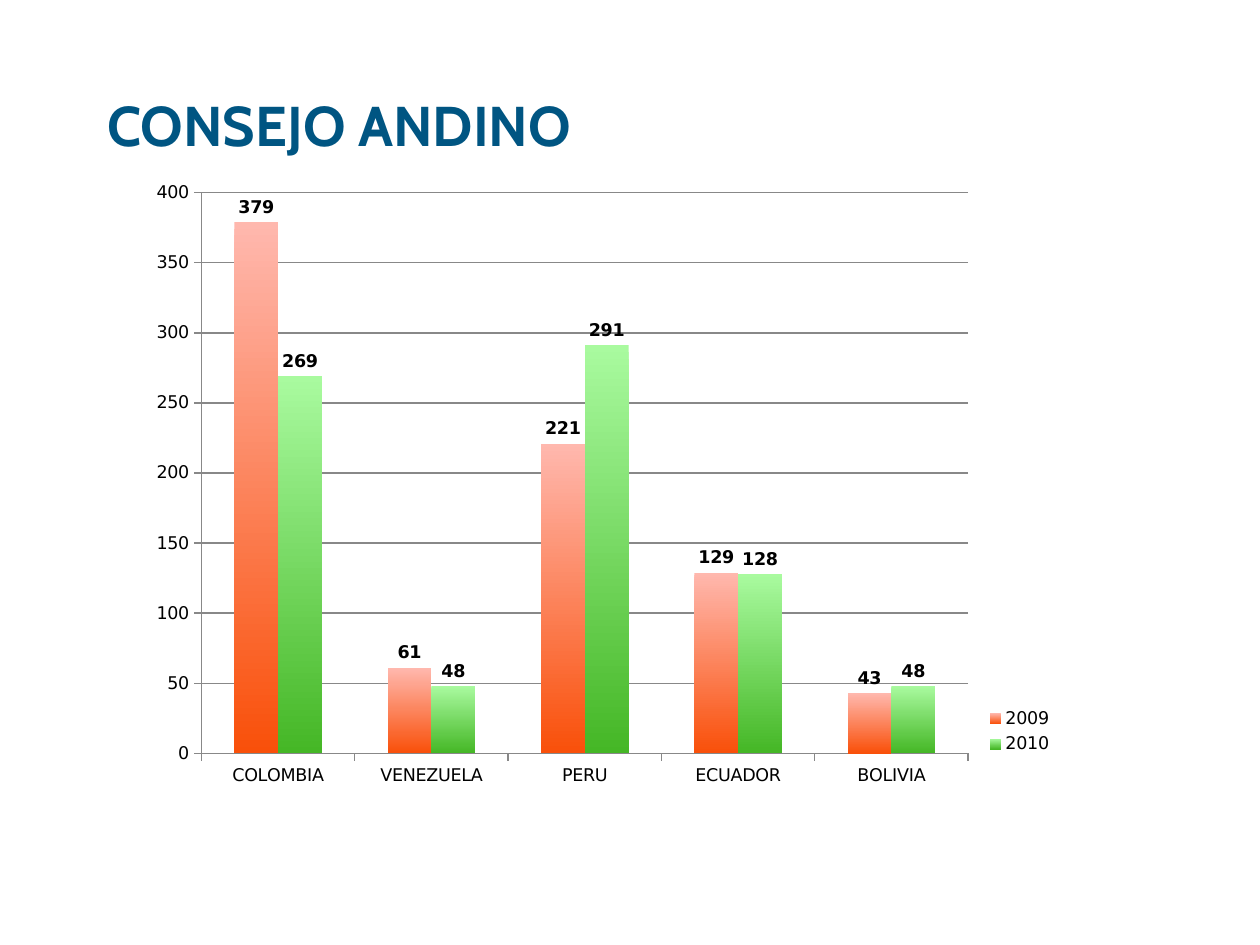
"""Build the Consejo Andino slide: a title over a clustered column chart."""
from lxml import etree
from pptx import Presentation
from pptx import util as u
from pptx.chart.data import CategoryChartData
from pptx.dml.color import RGBColor
from pptx.enum import chart as ch, text
from pptx.oxml.ns import qn

WIDE, HIGH = 10, 7.5
HEX = {"title": "005582", "text": "000000", "line": "888888"}
FILLS = [("FFB8AE", "F9500A"), ("A9FA9F", "45B726")]
LANDS = ["COLOMBIA", "VENEZUELA", "PERU", "ECUADOR", "BOLIVIA"]
YEARS = {"2009": [379, 61, 221, 129, 43], "2010": [269, 48, 291, 128, 48]}


def rgb(code):
    return RGBColor.from_string(code)


def style(item, **vals):
    for name, val in vals.items():
        setattr(item, name, val)


def box(left, top, wide, high):
    return [u.Inches(n) for n in (left, top, wide, high)]


def fix(node, spot, **vals):
    for old in node.findall(qn("c:layout")):
        node.remove(old)
    plan = etree.Element(qn("c:layout"))
    node.insert(spot, plan)
    hand = etree.SubElement(plan, qn("c:manualLayout"))
    for tag, val in vals.items():
        etree.SubElement(hand, qn("c:" + tag)).set("val", str(val))


def add_title(slide, words):
    title = slide.shapes.title
    left, top, wide, high = box(0.75, 0.67, WIDE * 0.85, HIGH / 6)
    style(title, left=left, top=top, width=wide, height=high)
    frame = title.text_frame
    style(frame, text=words, vertical_anchor=text.MSO_ANCHOR.TOP)
    para = frame.paragraphs[0]
    para.alignment = text.PP_ALIGN.LEFT
    font = para.runs[0].font
    style(font, name="Cabin", size=u.Pt(32), bold=True)
    font.color.rgb = rgb(HEX["title"])


def set_font(font, bold=False):
    style(font, name="DejaVu Sans", size=u.Pt(10), bold=bold)
    font.color.rgb = rgb(HEX["text"])


def set_line(form):
    form.line.color.rgb = rgb(HEX["line"])
    form.line.width = u.Pt(0.75)


def set_axes(chart):
    for axis in (chart.category_axis, chart.value_axis):
        style(axis, major_tick_mark=ch.XL_TICK_MARK.OUTSIDE,
              minor_tick_mark=ch.XL_TICK_MARK.NONE)
        set_line(axis.format)
    axis = chart.value_axis
    style(axis, minimum_scale=0, maximum_scale=400, major_unit=50,
          has_major_gridlines=True)
    set_line(axis.major_gridlines.format)


def set_bars(plot):
    style(plot, gap_width=150, overlap=0, vary_by_categories=False)
    for bars, shades in zip(plot.series, FILLS):
        fill = bars.format.fill
        fill.gradient()
        fill.gradient_angle = 270
        for stop, shade in zip(fill.gradient_stops, shades):
            stop.color.rgb = rgb(shade)
        tags = bars.data_labels
        style(tags, show_value=True,
              position=ch.XL_LABEL_POSITION.OUTSIDE_END)
        set_font(tags.font, bold=True)


def add_chart(slide):
    data = CategoryChartData()
    data.categories = LANDS
    for year, vals in YEARS.items():
        data.add_series(year, vals)
    chart = slide.shapes.add_chart(
        ch.XL_CHART_TYPE.COLUMN_CLUSTERED, *box(1.08, 1.33, 7.42, 5),
        data).chart
    style(chart, has_title=False, has_legend=True)
    set_font(chart.font)
    style(chart.legend, position=ch.XL_LEGEND_POSITION.RIGHT,
          include_in_layout=False)
    set_axes(chart)
    set_bars(chart.plots[0])
    root = chart._chartSpace
    fix(root.find(".//" + qn("c:plotArea")), 0, layoutTarget="inner",
        xMode="edge", yMode="edge", x=0.07, y=0.04, w=0.82, h=0.89)
    fix(root.find(".//" + qn("c:legend")), 1,
        xMode="edge", yMode="edge", x=0.9, y=0.85, w=0.09, h=0.09)


def main():
    deck = Presentation()
    style(deck, slide_width=u.Inches(WIDE), slide_height=u.Inches(HIGH))
    slide = deck.slides.add_slide(deck.slide_layouts[5])
    add_title(slide, "CONSEJO ANDINO")
    add_chart(slide)
    deck.save("out.pptx")


if __name__ == "__main__":
    main()
